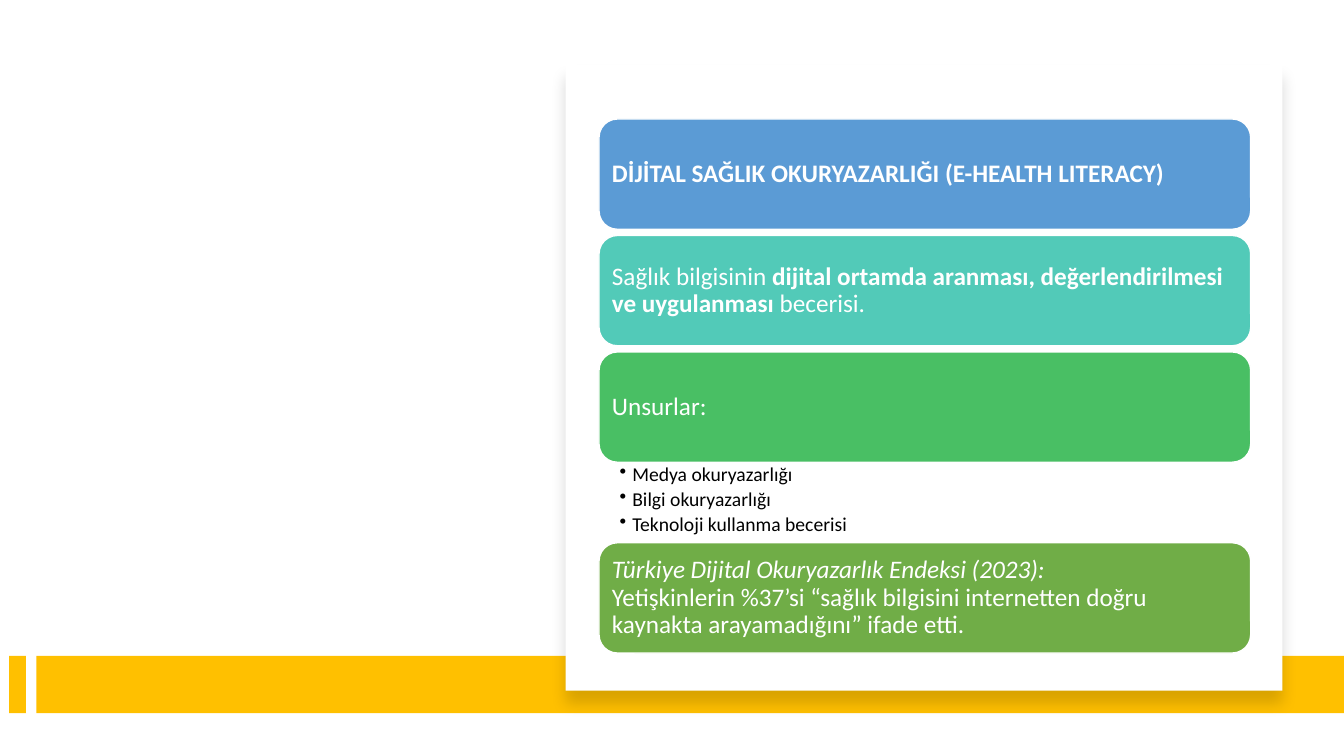
from dataclasses import dataclass

from lxml.etree import SubElement
from pptx import Presentation
from pptx.dml.color import RGBColor
from pptx.enum.shapes import MSO_SHAPE as Preset
from pptx.enum.text import MSO_ANCHOR as Anchor, PP_ALIGN as Align
from pptx.oxml.ns import qn
from pptx.util import Pt

FONT = "Calibri"
WHITE, BLACK, AMBER = "FFFFFF", "000000", "FFC000"


@dataclass
class Box:
    left: float
    top: float
    width: float
    height: float

    def lengths(self) -> list:
        return [Pt(v) for v in (self.left, self.top, self.width, self.height)]


@dataclass
class Piece:
    text: str
    bold: bool = False
    italic: bool = False


@dataclass
class Card:
    fill: str
    pieces: list[Piece]


def color(hex_code: str) -> RGBColor:
    return RGBColor.from_string(hex_code)


def apply(target, formats: dict) -> None:
    for name, value in formats.items():
        setattr(target, name, value)


def add_block(slide, preset, box: Box, fill: str):
    block = slide.shapes.add_shape(preset, *box.lengths())
    block.shadow.inherit = False
    block.fill.solid()
    block.fill.fore_color.rgb = color(fill)
    block.line.fill.background()
    return block


def add_soft_shadow(block) -> None:
    effects = block._element.spPr.find(qn("a:effectLst"))
    shadow = SubElement(effects, qn("a:outerShdw"), blurRad=str(Pt(11)), dist=str(Pt(10)),
                        dir="5400000", algn="t", rotWithShape="0")
    tint = SubElement(shadow, qn("a:srgbClr"), val=BLACK)
    SubElement(tint, qn("a:alpha"), val="15000")


def add_piece(paragraph, piece: Piece, size: float, ink: str) -> None:
    for number, line in enumerate(piece.text.split("\n")):
        if number:
            paragraph.add_line_break()
        if line:
            run = paragraph.add_run()
            run.text = line
            apply(run.font, {"name": FONT, "size": Pt(size), "bold": piece.bold,
                             "italic": piece.italic})
            run.font.color.rgb = color(ink)


def add_card(slide, card: Card, box: Box) -> None:
    block = add_block(slide, Preset.ROUNDED_RECTANGLE, box, card.fill)
    block.line.color.rgb = color(WHITE)
    block.line.width = Pt(1)
    inset = Pt(5.4)
    apply(block.text_frame, {"word_wrap": True, "vertical_anchor": Anchor.MIDDLE,
                             "margin_left": inset, "margin_right": inset,
                             "margin_top": inset, "margin_bottom": inset})
    paragraph = block.text_frame.paragraphs[0]
    apply(paragraph, {"alignment": Align.LEFT, "line_spacing": 0.9})
    for piece in card.pieces:
        add_piece(paragraph, piece, 18, WHITE)


def add_bullets(slide, items: list[str], box: Box) -> None:
    frame = slide.shapes.add_textbox(*box.lengths()).text_frame
    apply(frame, {"word_wrap": True, "vertical_anchor": Anchor.TOP,
                  "margin_left": Pt(14.8), "margin_right": Pt(10),
                  "margin_top": Pt(1.8), "margin_bottom": Pt(1.8)})
    for number, item in enumerate(items):
        paragraph = frame.add_paragraph() if number else frame.paragraphs[0]
        apply(paragraph, {"level": 1, "alignment": Align.LEFT, "line_spacing": 0.9,
                          "space_after": Pt(2.5)})
        properties = paragraph._p.get_or_add_pPr()
        properties.set("marL", str(Pt(9)))
        properties.set("indent", str(-Pt(9)))
        SubElement(properties, qn("a:buChar"), char="•")
        add_piece(paragraph, Piece(item), 14, BLACK)


CARDS = [
    Card("5B9BD5", [Piece("DİJİTAL SAĞLIK OKURYAZARLIĞI (E-HEALTH LITERACY)", bold=True)]),
    Card("52CAB8", [Piece("Sağlık bilgisinin "),
                    Piece("dijital ortamda aranması, değerlendirilmesi ve uygulanması", bold=True),
                    Piece(" becerisi.")]),
    Card("49BF64", [Piece("Unsurlar:")]),
    Card("70AD47", [Piece("Türkiye Dijital Okuryazarlık Endeksi (2023):\n", italic=True),
                    Piece("Yetişkinlerin %37’si “sağlık bilgisini internetten doğru "
                          "kaynakta arayamadığını” ifade etti.")]),
]
ELEMENTS = ["Medya okuryazarlığı", "Bilgi okuryazarlığı", "Teknoloji kullanma becerisi"]
ELEMENTS_CARD = 2  # the card that the bullets belong to

STACK_LEFT, STACK_TOP, STACK_WIDTH = 427.9, 85, 465.5
CARD_HEIGHT, CARD_GAP, BULLETS_HEIGHT = 78.8, 4.4, 57.5


def main() -> None:
    deck = Presentation()
    deck.slide_width, deck.slide_height = Pt(960), Pt(540)
    slide = deck.slides.add_slide(deck.slide_layouts[6])

    # Amber band along the bottom
    for left, width in ((6.5, 12), (25.9, 934.1)):
        add_block(slide, Preset.RECTANGLE, Box(left, 468.5, width, 41), AMBER)

    # White panel
    panel = add_block(slide, Preset.RECTANGLE, Box(404, 46, 512, 447.3), WHITE)
    add_soft_shadow(panel)

    # Stack of cards, with the bullets under their card
    top = STACK_TOP
    for number, card in enumerate(CARDS):
        add_card(slide, card, Box(STACK_LEFT, top, STACK_WIDTH, CARD_HEIGHT))
        top += CARD_HEIGHT
        if number == ELEMENTS_CARD:
            add_bullets(slide, ELEMENTS, Box(STACK_LEFT, top, STACK_WIDTH, BULLETS_HEIGHT))
            top += BULLETS_HEIGHT
        else:
            top += CARD_GAP

    deck.save("out.pptx")


if __name__ == "__main__":
    main()
